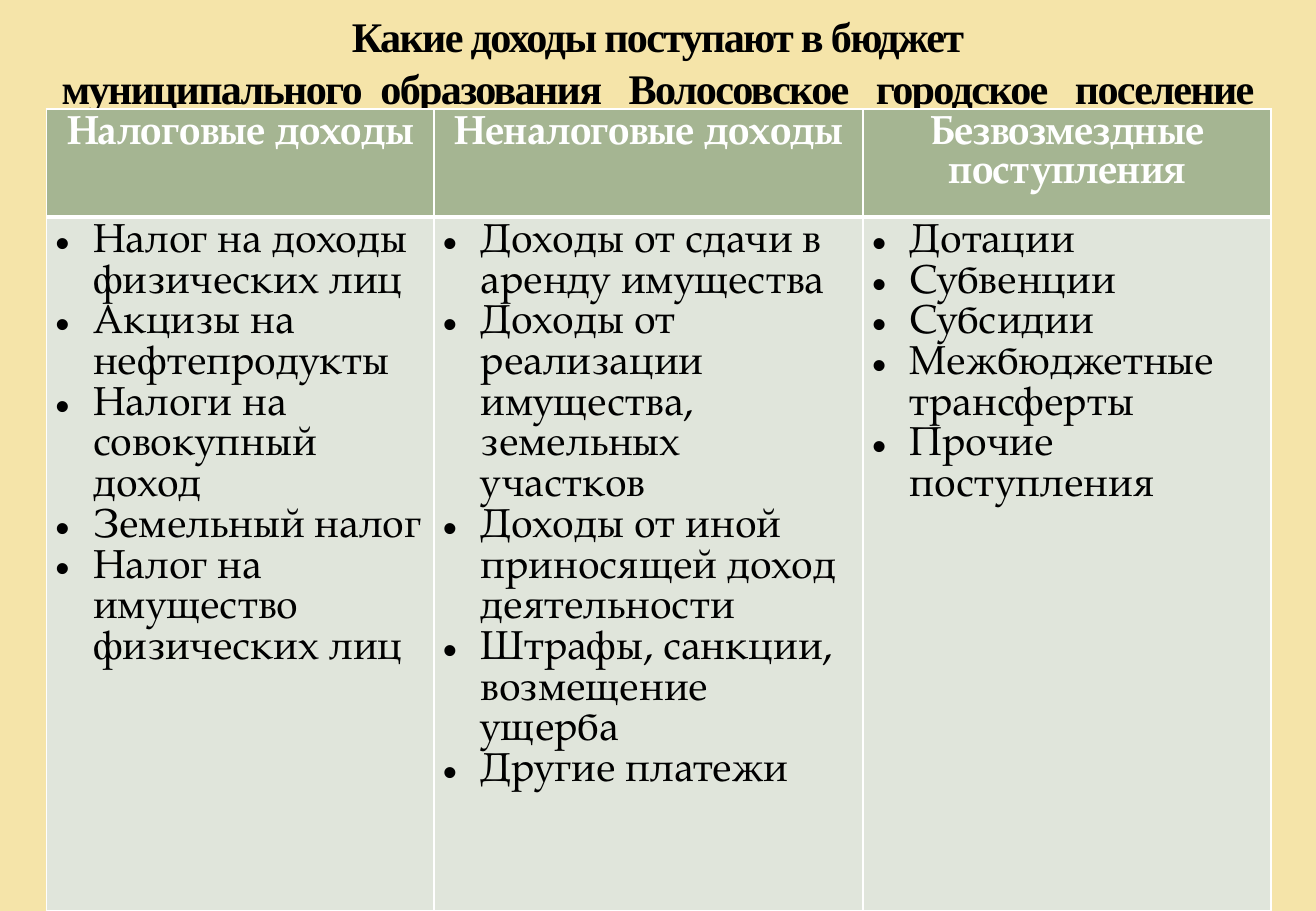
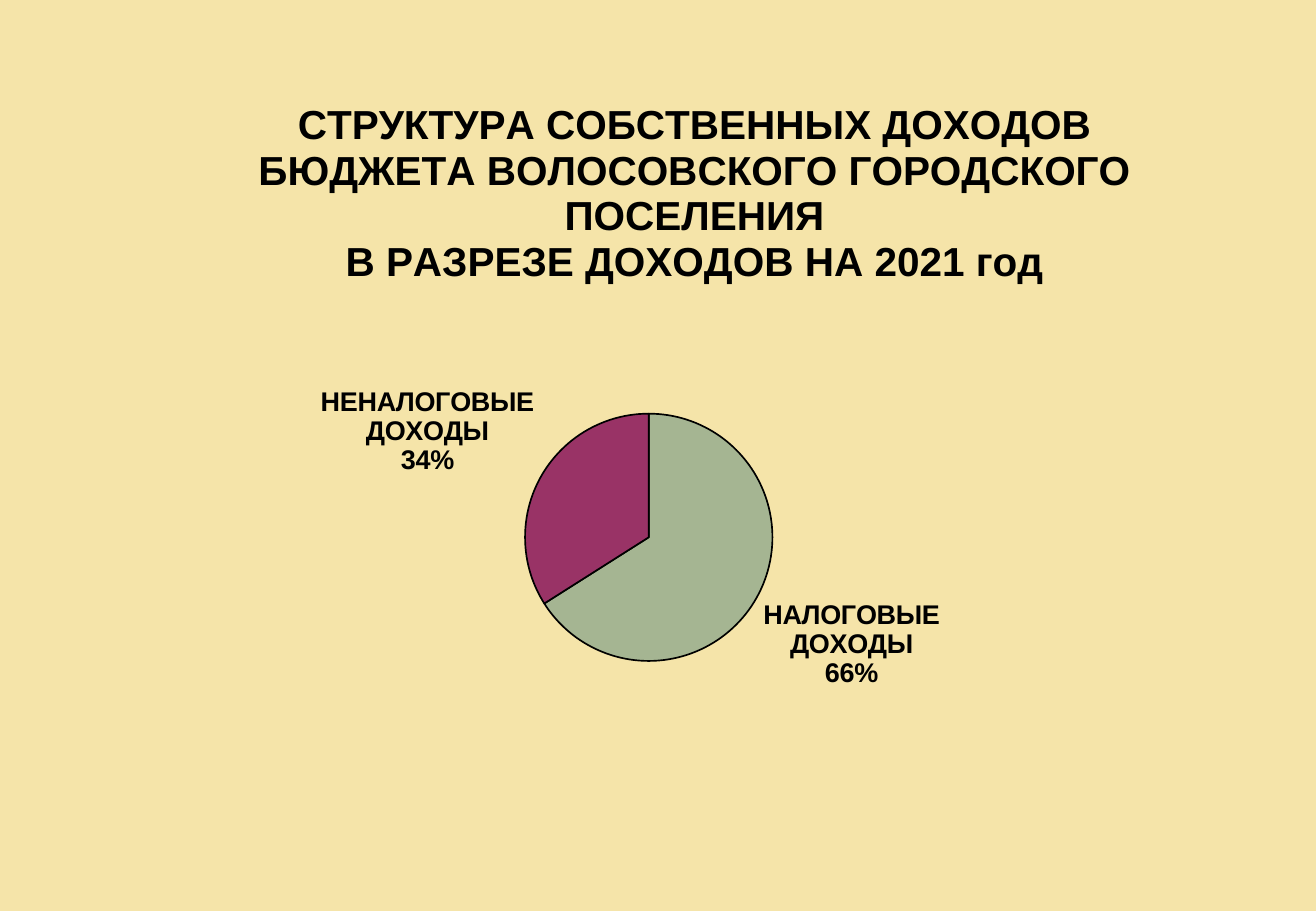
from lxml import etree
from pptx import Presentation
from pptx import util as u
from pptx.chart.data import CategoryChartData
from pptx.dml.color import RGBColor
from pptx.enum import chart as ch, text as tx
from pptx.oxml import parse_xml
from pptx.oxml.ns import nsdecls, qn

Cm, Pt = u.Cm, u.Pt

HUES = {"sand": "F5E4A9", "sage": "A5B592", "pale": "E0E5DB",
        "plum": "993366", "ink": "000000", "white": "FFFFFF"}

# Text formats
HEAD = {"name": "Times New Roman", "size": Pt(25), "bold": True, "hue": "ink"}
TOP = {"name": "TeX Gyre Pagella", "size": Pt(24), "bold": True, "hue": "white"}
BODY = {**TOP, "bold": False, "hue": "ink"}
CHART = {"name": "Arial", "size": Pt(10), "bold": False, "hue": "ink"}
NAME = {**CHART, "size": Pt(24), "bold": True}
LABEL = {**NAME, "size": Pt(16)}

# Title words, each line with the spacing (points) of its gaps
TITLE = [("Какие доходы поступают в бюджет", [-1] * 4),
         ("муниципального образования Волосовское городское поселение",
          [4.25, 9.5, 9.5, 9.5])]

INCOME = {
    "Налоговые доходы": [
        "Налог на доходы физических лиц", "Акцизы на нефтепродукты",
        "Налоги на совокупный доход", "Земельный налог",
        "Налог на имущество физических лиц"],
    "Неналоговые доходы": [
        "Доходы от сдачи в аренду имущества",
        "Доходы от реализации имущества, земельных участков",
        "Доходы от иной приносящей доход деятельности",
        "Штрафы, санкции, возмещение ущерба", "Другие платежи"],
    "Безвозмездные поступления": [
        "Дотации", "Субвенции", "Субсидии", "Межбюджетные трансферты",
        "Прочие поступления"]}

SHARES = [("НАЛОГОВЫЕ ДОХОДЫ", 66, "sage"), ("НЕНАЛОГОВЫЕ ДОХОДЫ", 34, "plum")]
CAPTION = ["СТРУКТУРА СОБСТВЕННЫХ ДОХОДОВ",
           "БЮДЖЕТА ВОЛОСОВСКОГО ГОРОДСКОГО ПОСЕЛЕНИЯ",
           "В РАЗРЕЗЕ ДОХОДОВ НА 2021 год"]


def rgb(hue):
    return RGBColor.from_string(HUES[hue])


def paint(fill, hue):
    fill.solid()
    fill.fore_color.rgb = rgb(hue)


def style(font, look):
    for key, val in look.items():
        if key == "hue":
            font.color.rgb = rgb(val)
        else:
            setattr(font, key, val)


def fill_text(frame, lines, look, align=None, mark=False):
    for i, line in enumerate(lines):
        para = frame.paragraphs[0] if i == 0 else frame.add_paragraph()
        if align is not None:
            para.alignment = align
        if mark:
            bullet(para)
        run = para.add_run()
        run.text = line
        style(run.font, look)


def bullet(para):
    props = para._p.get_or_add_pPr()
    props.set("marL", str(Cm(0.79)))
    props.set("indent", str(-Cm(0.79)))
    hue = etree.SubElement(props, qn("a:buClr"))
    etree.SubElement(hue, qn("a:srgbClr"), val=HUES["ink"])
    etree.SubElement(props, qn("a:buFont"), typeface="Arial")
    etree.SubElement(props, qn("a:buChar"), char="•")


def edge(cell, sides):
    """Draw white borders; sides maps L, R, T, B to points."""
    props = cell._tc.get_or_add_tcPr()
    for i, (side, wide) in enumerate(sides.items()):
        props.insert(i, parse_xml(
            f'<a:ln{side} {nsdecls("a")} w="{Pt(wide)}"><a:solidFill>'
            f'<a:srgbClr val="{HUES["white"]}"/></a:solidFill></a:ln{side}>'))


def add_title(slide):
    shape = slide.shapes.title
    box = {"left": 0, "top": Cm(0.06), "width": Cm(27.51), "height": Cm(2.72)}
    for key, val in box.items():
        setattr(shape, key, val)
    frame = shape.text_frame
    frame.auto_size = tx.MSO_AUTO_SIZE.NONE
    frame.vertical_anchor = tx.MSO_ANCHOR.TOP
    para = frame.paragraphs[0]
    para.alignment = tx.PP_ALIGN.CENTER
    para.line_spacing = 1.03

    def put(word, gap):
        run = para.add_run()
        run.text = word
        style(run.font, HEAD)
        run._r.get_or_add_rPr().set("spc", str(round(gap * 100)))

    for i, (line, gaps) in enumerate(TITLE):
        if i:
            para.add_line_break()
        for word, gap in zip(line.split(), gaps + [None]):
            put(word, -1)
            if gap is not None:
                put(" ", gap)


def add_grid(slide):
    wides, highs = [8.1, 8.97, 8.53], [2.26, 14.5]
    table = slide.shapes.add_table(
        2, 3, Cm(0.97), Cm(2.28), Cm(sum(wides)), Cm(sum(highs))).table
    for row, high in zip(table.rows, highs):
        row.height = Cm(high)
    for col, (head, items) in enumerate(INCOME.items()):
        table.columns[col].width = Cm(wides[col])
        top, body = table.cell(0, col), table.cell(1, col)
        fill_text(top.text_frame, [head], TOP, tx.PP_ALIGN.CENTER)
        fill_text(body.text_frame, items, BODY, mark=True)
        for cell, hue, rule in ((top, "sage", "B"), (body, "pale", "T")):
            cell.margin_left = cell.margin_right = Cm(0.19)
            paint(cell.fill, hue)
            edge(cell, {**dict.fromkeys("LRTB", 0.96), rule: 3})


def layout(spot, inner=False):
    """Make a manual chart layout from x, y, w, h fractions."""
    node = etree.Element(qn("c:layout"))
    man = etree.SubElement(node, qn("c:manualLayout"))
    if inner:
        etree.SubElement(man, qn("c:layoutTarget"), val="inner")
    for key in "xy":
        etree.SubElement(man, qn(f"c:{key}Mode"), val="edge")
    for key, val in spot.items():
        etree.SubElement(man, qn(f"c:{key}"), val=str(val))
    return node


def place(parent, index, node):
    for old in parent.findall(qn("c:layout")):
        parent.remove(old)
    parent.insert(index, node)


def add_pie(slide):
    data = CategoryChartData()
    data.categories = [name for name, _, _ in SHARES]
    data.add_series("Series 1", [val for _, val, _ in SHARES])
    chart = slide.shapes.add_chart(
        ch.XL_CHART_TYPE.PIE, Cm(1.09), Cm(1.52), Cm(24.92), Cm(16.74),
        data).chart
    chart.has_legend = False
    style(chart.font, CHART)

    # Caption and plot area
    title = chart.chart_title
    fill_text(title.text_frame, CAPTION, NAME, tx.PP_ALIGN.CENTER)
    place(title._element, 1, layout({"x": 0.17, "y": 0.03}))
    area = chart._chartSpace.chart.plotArea
    place(area, 0, layout({"x": 0.264, "y": 0.426, "w": 0.473, "h": 0.309}, True))

    # Slices
    plot = chart.plots[0]
    plot.vary_by_categories = True
    for i, (_, _, hue) in enumerate(SHARES):
        form = plot.series[0].points[i].format
        paint(form.fill, hue)
        form.line.color.rgb = rgb("ink")
        form.line.width = Pt(1)

    # Labels
    labels = plot.series[0].data_labels
    style(labels.font, LABEL)
    look = {"show_category_name": True, "show_percentage": True,
            "show_value": False, "number_format": "0%",
            "number_format_is_linked": False,
            "position": ch.XL_LABEL_POSITION.BEST_FIT}
    for key, val in look.items():
        setattr(labels, key, val)
    split = etree.Element(qn("c:separator"))
    split.text = "\n"
    labels._element.find(qn("c:showBubbleSize")).addnext(split)


def main():
    deck = Presentation()
    deck.slide_width, deck.slide_height = Cm(27.51), Cm(19.05)
    paint(deck.slide_master.background.fill, "sand")

    # Kinds of income
    slide = deck.slides.add_slide(deck.slide_layouts[5])
    add_title(slide)
    add_grid(slide)

    # Shares of income
    add_pie(deck.slides.add_slide(deck.slide_layouts[6]))
    deck.save("out.pptx")


if __name__ == "__main__":
    main()
